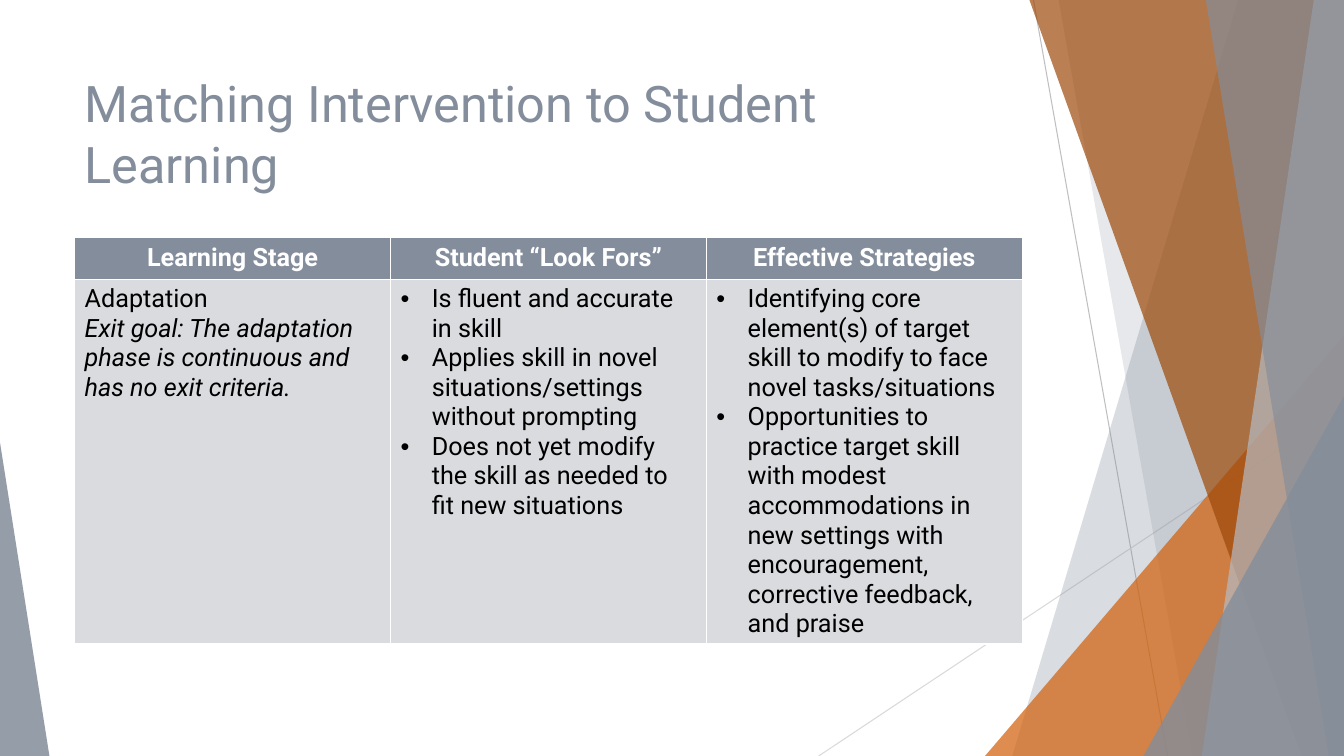
from pptx import Presentation
from pptx.dml.color import RGBColor
from pptx.enum.shapes import MSO_CONNECTOR, MSO_SHAPE
from pptx.enum.text import MSO_ANCHOR, PP_ALIGN
from pptx.oxml.ns import qn
from pptx.util import Inches, Pt
from lxml import etree

STRAIGHT = MSO_CONNECTOR.STRAIGHT
TRIANGLE = MSO_SHAPE.ISOSCELES_TRIANGLE
TOP = MSO_ANCHOR.TOP
LEFT, CENTER = PP_ALIGN.LEFT, PP_ALIGN.CENTER

TITLE = "Matching Intervention to Student Learning"
HEADERS = ["Learning Stage", "Student “Look Fors”", "Effective Strategies"]
STAGE = [
    "Adaptation",
    "Exit goal: The adaptation phase is continuous and has no exit criteria.",
]
LOOK_FORS = [
    "Is fluent and accurate in skill",
    "Applies skill in novel situations/settings without prompting",
    "Does not yet modify the skill as needed to fit new situations",
]
STRATEGIES = [
    "Identifying core element(s) of target skill to modify to face novel tasks/situations",
    "Opportunities to practice target skill with modest accommodations in new settings "
    "with encouragement, corrective feedback, and praise",
]

FONT = "Roboto"
COLORS = {
    "slate": "838D9B", "mist": "B5BBC3", "orange": "D2610C", "rust": "9D4909",
    "cell": "D9DBDE", "white": "FFFFFF", "black": "000000",
    "line": "BFBFBF", "pale line": "D9D9D9",
}

W, H = 13.33, 7.5
MARGIN, CONTENT_W = 0.74, 9.4
TITLE_TOP, TITLE_H = 0.67, 1.44
TABLE_TOP, ROW_HEIGHTS = 2.36, (0.41, 3.62)
INDENT = 0.31

# start x, start y, end x, end y, colour
LINES = [(10.25, 0, 11.58, H, "line"), (W, 4.03, 8.12, H, "pale line")]
# Bands reach the right edge: ("band", top x, bottom x, colour, opacity %)
# Wedges stand on the bottom edge: ("wedge", left, width, height, apex, colour, opacity %)
DECOR = [
    ("band", 12.28, 10.04, "slate", 30),
    ("band", 10.5, 11.83, "slate", 20),
    ("wedge", 9.77, 3.56, 4.17, 1, "orange", 72),
    ("band", 10.21, 12.91, "rust", 70),
    ("band", 13.03, 11.92, "mist", 70),
    ("band", 11.96, 13.18, "slate", 65),
    ("wedge", 11.34, 1.99, 3.57, 1, "slate", 80),
    ("wedge", 0, 0.49, 3.11, 0, "slate", 85),
]


def rgb(name):
    return RGBColor.from_string(COLORS[name])


def style_runs(p, size, color, bold=False, italic=False):
    for r in p.runs:
        r.font.name, r.font.size = FONT, Pt(size)
        r.font.bold, r.font.italic = bold, italic
        r.font.color.rgb = rgb(color)


def add_line(slide, x1, y1, x2, y2, color):
    line = slide.shapes.add_connector(STRAIGHT, *map(Inches, (x1, y1, x2, y2)))
    line.line.color.rgb = rgb(color)
    line.line.width = Pt(0.75)
    etree.SubElement(line._element.spPr, qn("a:effectLst"))


def add_band(slide, top_x, bottom_x):
    builder = slide.shapes.build_freeform(Inches(top_x), 0)
    corners = [(W, 0), (W, H), (bottom_x, H)]
    builder.add_line_segments([(Inches(x), Inches(y)) for x, y in corners])
    return builder.convert_to_shape()


def add_wedge(slide, left, width, height, apex):
    sp = slide.shapes.add_shape(TRIANGLE, *map(Inches, (left, H - height, width, height)))
    sp.adjustments[0] = apex
    return sp


def fill_translucent(sp, color, opacity):
    sp.shadow.inherit = False
    sp.line.fill.background()
    sp.fill.solid()
    sp.fill.fore_color.rgb = rgb(color)
    clr = sp._element.spPr.find(qn("a:solidFill"))[0]
    etree.SubElement(clr, qn("a:alpha"), val=str(opacity * 1000))


def add_bullet(p):
    pPr = p._p.get_or_add_pPr()
    pPr.set("marL", str(Inches(INDENT)))
    pPr.set("indent", str(-Inches(INDENT)))
    etree.SubElement(pPr, qn("a:buFont"), typeface="Arial")
    etree.SubElement(pPr, qn("a:buChar"), char="•")


def fill_cell(cell, lines, fill):
    cell.fill.solid()
    cell.fill.fore_color.rgb = rgb(fill)
    cell.text_frame.text = "\n".join(lines)
    return cell.text_frame.paragraphs


def add_stage_table(slide):
    box = (MARGIN, TABLE_TOP, CONTENT_W, sum(ROW_HEIGHTS))
    table = slide.shapes.add_table(2, len(HEADERS), *map(Inches, box)).table
    for row, height in zip(table.rows, ROW_HEIGHTS):
        row.height = Inches(height)
    for col, header in enumerate(HEADERS):
        for p in fill_cell(table.cell(0, col), [header], "slate"):
            p.alignment = CENTER
            style_runs(p, 18, "white", bold=True)
    for col, lines in enumerate([STAGE, LOOK_FORS, STRATEGIES]):
        for i, p in enumerate(fill_cell(table.cell(1, col), lines, "cell")):
            style_runs(p, 18, "black", italic=col == 0 and i == 1)
            if col > 0:
                add_bullet(p)


def set_title(slide):
    title = slide.shapes.title
    title.left, title.top = Inches(MARGIN), Inches(TITLE_TOP)
    title.width, title.height = Inches(CONTENT_W), Inches(TITLE_H)
    tf = title.text_frame
    tf.text = TITLE
    tf.word_wrap = True
    tf.vertical_anchor = TOP
    p = tf.paragraphs[0]
    p.alignment = LEFT
    style_runs(p, 36, "slate")


def main():
    prs = Presentation()
    prs.slide_width, prs.slide_height = Inches(W), Inches(H)
    slide = prs.slides.add_slide(prs.slide_layouts[5])
    for line in LINES:
        add_line(slide, *line)
    makers = {"band": add_band, "wedge": add_wedge}
    for kind, *geometry, color, opacity in DECOR:
        fill_translucent(makers[kind](slide, *geometry), color, opacity)
    set_title(slide)
    add_stage_table(slide)
    prs.save("out.pptx")


if __name__ == "__main__":
    main()
